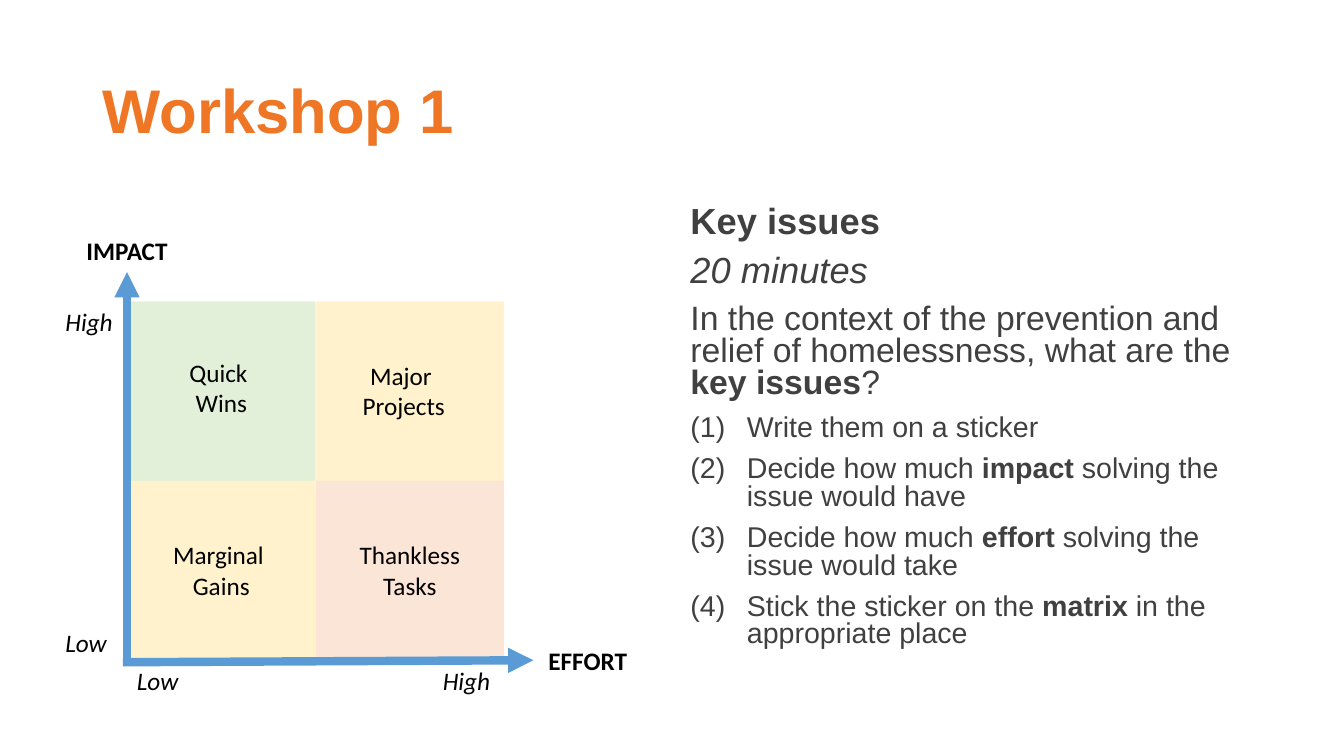
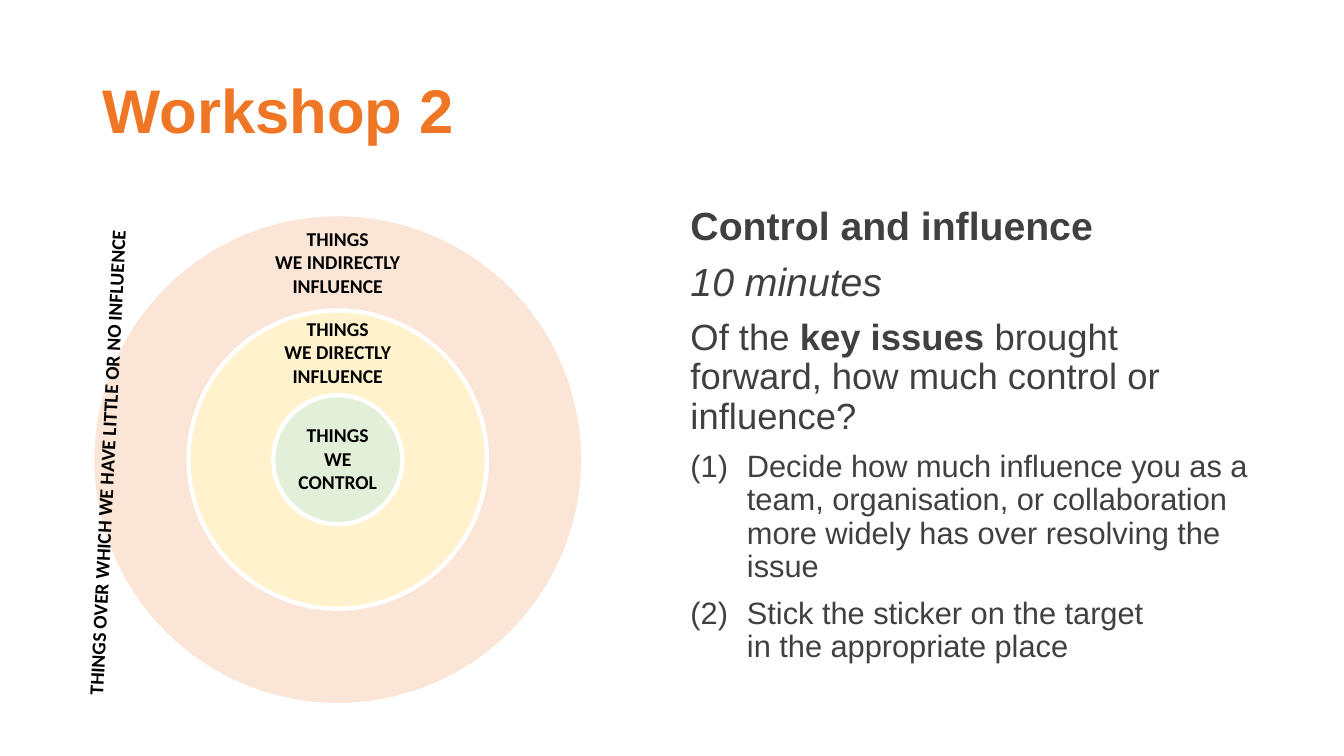
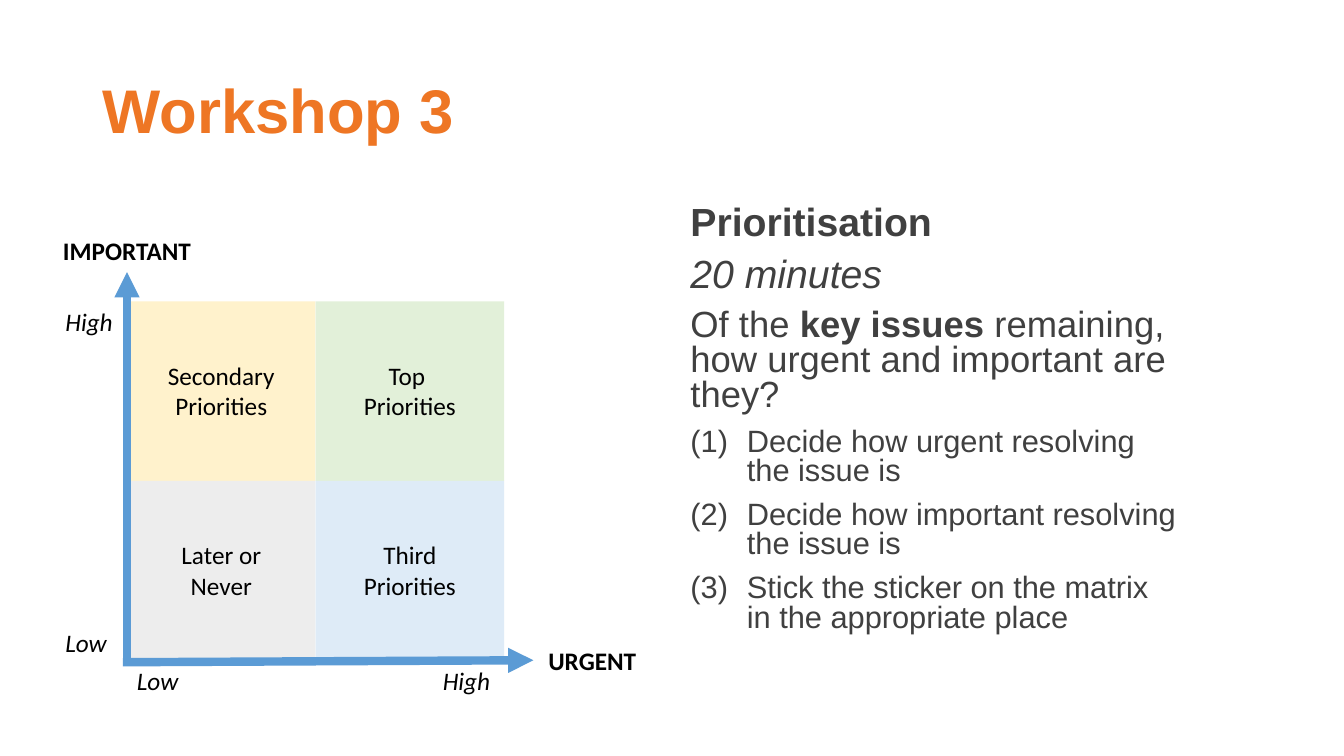
from lxml import etree
from pptx import Presentation
from pptx.dml.color import RGBColor
from pptx.enum.shapes import MSO_CONNECTOR, MSO_SHAPE
from pptx.enum.text import MSO_ANCHOR, PP_ALIGN
from pptx.oxml.ns import qn
from pptx.util import Inches, Pt

LEFT, CENTER, RIGHT = PP_ALIGN.LEFT, PP_ALIGN.CENTER, PP_ALIGN.RIGHT
TOP, MIDDLE = MSO_ANCHOR.TOP, MSO_ANCHOR.MIDDLE
RECTANGLE, OVAL = MSO_SHAPE.RECTANGLE, MSO_SHAPE.OVAL
STRAIGHT = MSO_CONNECTOR.STRAIGHT

ORANGE = RGBColor(0xEE, 0x76, 0x24)
DARK_GRAY = RGBColor(0x40, 0x40, 0x40)
BLACK = RGBColor(0x00, 0x00, 0x00)
WHITE = RGBColor(0xFF, 0xFF, 0xFF)
AXIS_BLUE = RGBColor(0x5B, 0x9B, 0xD5)
YELLOW = RGBColor(0xFF, 0xF2, 0xCC)
GREEN = RGBColor(0xE2, 0xF0, 0xD9)
PEACH = RGBColor(0xFB, 0xE5, 0xD6)
GRAY = RGBColor(0xED, 0xED, 0xED)
BLUE = RGBColor(0xDE, 0xEB, 0xF7)

HEADING_FONT, DIAGRAM_FONT = "Arial", "Calibri"

WORKSHOPS = [
    {
        "title": "Workshop 1",
        "heading": "Key issues",
        "duration": "20 minutes",
        "question": [
            ("In the context of the prevention and relief of homelessness, what are the ", False),
            ("key issues", True),
            ("?", False),
        ],
        "steps": [
            [("Write them on a sticker", False)],
            [("Decide how much ", False), ("impact", True), (" solving the issue would have", False)],
            [("Decide how much ", False), ("effort", True), (" solving the issue would take", False)],
            [("Stick the sticker on the ", False), ("matrix", True), (" in the appropriate place", False)],
        ],
        "sizes": (25.9, 24.1, 20.4),
        "line_spacing": 0.8,
        "body_width": 5.67,
        "matrix": {
            "axes": ("IMPACT", "EFFORT"),
            "quadrants": [
                (0, 0, GREEN, ["Quick \nWins"], 0, -0.03),
                (1, 0, YELLOW, ["Major ", "Projects"], -0.06, 0),
                (0, 1, YELLOW, ["Marginal \nGains"], 0, 0),
                (1, 1, PEACH, ["Thankless\nTasks"], 0, 0),
            ],
        },
    },
    {
        "title": "Workshop 2",
        "heading": "Control and influence",
        "duration": "10 minutes",
        "question": [
            ("Of the ", False),
            ("key issues", True),
            (" brought forward, how much control or influence?", False),
        ],
        "steps": [
            [("Decide how much influence you as a team, organisation, or collaboration "
              "more widely has over resolving the issue", False)],
            [("Stick the sticker on the target \nin the appropriate place", False)],
        ],
        "sizes": (28, 26, 22),
        "line_spacing": 0.9,
        "body_width": 5.79,
        "target": {
            "rings": [
                (4.87, PEACH, 2.2, ["THINGS", "WE INDIRECTLY", "INFLUENCE"]),
                (2.96, YELLOW, 3.09, ["THINGS", "WE DIRECTLY", "INFLUENCE"]),
                (1.28, GREEN, 4.15, ["THINGS", "WE", "CONTROL"]),
            ],
            "outside": "THINGS OVER WHICH WE HAVE LITTLE OR NO INFLUENCE",
        },
    },
    {
        "title": "Workshop 3",
        "heading": "Prioritisation",
        "duration": "20 minutes",
        "question": [
            ("Of the ", False),
            ("key issues", True),
            (" remaining, how urgent and important are they?", False),
        ],
        "steps": [
            [("Decide how urgent resolving \nthe issue is", False)],
            [("Decide how important resolving \nthe issue is", False)],
            [("Stick the sticker on the matrix \nin the appropriate place", False)],
        ],
        "sizes": (28, 26, 22),
        "line_spacing": 0.8,
        "body_width": 5.6,
        "matrix": {
            "axes": ("IMPORTANT", "URGENT"),
            "quadrants": [
                (0, 0, YELLOW, ["Secondary\nPriorities"], 0, 0),
                (1, 0, GREEN, ["Top ", "Priorities"], 0, 0),
                (0, 1, GRAY, ["Later or\nNever"], 0, 0),
                (1, 1, BLUE, ["Third", "Priorities"], 0, 0),
            ],
        },
    },
]

MATRIX_LEFT, MATRIX_TOP = 1.26, 2.99
CELL_WIDTH, CELL_HEIGHT = 1.87, 1.78
AXES = [((1.26, 6.57), (1.26, 2.7)), ((1.22, 6.57), (5.29, 6.55))]
SCALE_LABELS = [
    ("High", 0.55, 2.99, LEFT),
    ("Low", 0.55, 6.17, LEFT),
    ("Low", 1.26, 6.55, LEFT),
    ("High", 4.26, 6.55, RIGHT),
]
TARGET_X, TARGET_Y = 3.35, 4.56
STEP_INDENT = Inches(0.56)


def add_box(slide, left, top, width, height, anchor=TOP):
    box = slide.shapes.add_textbox(Inches(left), Inches(top), Inches(width), Inches(height))
    box.text_frame.word_wrap = True
    box.text_frame.vertical_anchor = anchor
    return box


def next_paragraph(frame, is_first):
    return frame.paragraphs[0] if is_first else frame.add_paragraph()


def add_text(paragraph, text, size, font, color, bold=False, italic=False):
    for index, line in enumerate(text.split("\n")):
        if index:
            paragraph.add_line_break()
        run = paragraph.add_run()
        run.text = line
        run.font.size = Pt(size)
        run.font.name = font
        run.font.color.rgb = color
        run.font.bold = bold
        run.font.italic = italic


def add_label(slide, lines, left, top, width, height, size=18, align=CENTER, bold=False, italic=False):
    box = add_box(slide, left, top, width, height)
    for index, line in enumerate(lines):
        paragraph = next_paragraph(box.text_frame, index == 0)
        paragraph.alignment = align
        add_text(paragraph, line, size, DIAGRAM_FONT, BLACK, bold, italic)
    return box


def add_filled(slide, kind, left, top, width, height, color):
    shape = slide.shapes.add_shape(kind, Inches(left), Inches(top), Inches(width), Inches(height))
    shape.shadow.inherit = False
    shape.fill.solid()
    shape.fill.fore_color.rgb = color
    shape.line.fill.background()
    return shape


def add_arrow(slide, start, end):
    arrow = slide.shapes.add_connector(STRAIGHT, *(Inches(value) for value in start + end))
    arrow.line.color.rgb = AXIS_BLUE
    arrow.line.width = Pt(6)
    etree.SubElement(arrow.line._get_or_add_ln(), qn("a:tailEnd"), type="triangle")
    etree.SubElement(arrow._element.spPr, qn("a:effectLst"))


def add_title(slide, title):
    paragraph = add_box(slide, 0.92, 0.4, 11.5, 1.45, MIDDLE).text_frame.paragraphs[0]
    paragraph.line_spacing = 0.9
    add_text(paragraph, title, 44, HEADING_FONT, ORANGE, bold=True)


def number_paragraph(paragraph):
    properties = paragraph._p.get_or_add_pPr()
    properties.set("marL", str(STEP_INDENT))
    properties.set("indent", str(-STEP_INDENT))
    etree.SubElement(properties, qn("a:buFont"), typeface=HEADING_FONT)
    etree.SubElement(properties, qn("a:buAutoNum"), type="arabicParenBoth")


def add_body(slide, workshop):
    heading_size, question_size, step_size = workshop["sizes"]
    rows = [
        ([(workshop["heading"], True)], heading_size, False, False),
        ([(workshop["duration"], False)], heading_size, True, False),
        (workshop["question"], question_size, False, False),
    ]
    rows += [(step, step_size, False, True) for step in workshop["steps"]]
    frame = add_box(slide, 6.75, 2, workshop["body_width"], 4.76).text_frame
    for index, (runs, size, italic, numbered) in enumerate(rows):
        paragraph = next_paragraph(frame, index == 0)
        if numbered:
            number_paragraph(paragraph)
        paragraph.line_spacing = workshop["line_spacing"]
        if index:
            paragraph.space_before = Pt(10)
        for text, bold in runs:
            add_text(paragraph, text, size, HEADING_FONT, DARK_GRAY, bold, italic)


def add_matrix(slide, matrix):
    cells = [
        (MATRIX_LEFT + column * CELL_WIDTH, MATRIX_TOP + row * CELL_HEIGHT, *rest)
        for column, row, *rest in matrix["quadrants"]
    ]
    for left, top, color, *_ in cells:
        add_filled(slide, RECTANGLE, left, top, CELL_WIDTH, CELL_HEIGHT, color)
    for start, end in AXES:
        add_arrow(slide, start, end)
    vertical, horizontal = matrix["axes"]
    add_label(slide, [vertical], MATRIX_LEFT - 0.75, 2.29, 1.5, 0.4, bold=True)
    add_label(slide, [horizontal], 5.34, 6.35, 1.2, 0.4, align=LEFT, bold=True)
    for text, left, top, align in SCALE_LABELS:
        add_label(slide, [text], left, top, 0.7, 0.4, align=align, italic=True)
    width, height = 1.3, 0.71
    for left, top, color, lines, shift_x, shift_y in cells:
        add_label(slide, lines, left + (CELL_WIDTH - width) / 2 + shift_x,
                  top + (CELL_HEIGHT - height) / 2 + shift_y, width, height)


def add_target(slide, target):
    for diameter, color, *_ in target["rings"]:
        ring = add_filled(slide, OVAL, TARGET_X - diameter / 2, TARGET_Y - diameter / 2,
                          diameter, diameter, color)
        ring.line.color.rgb = WHITE
        ring.line.width = Pt(3)
    width = 1.5
    for _, _, label_top, lines in target["rings"]:
        add_label(slide, lines, TARGET_X - width / 2, label_top, width, 0.81, size=14, bold=True)
    outside = add_label(slide, [target["outside"]], 0.76, 2.01, 5.24, 5.15, size=14, bold=True)
    outside.rotation = 272.8
    outside.text_frame.margin_top = Inches(0.14)
    outside.text_frame.margin_right = Inches(0.34)


def main():
    presentation = Presentation()
    presentation.slide_width, presentation.slide_height = Inches(13.33), Inches(7.5)
    for workshop in WORKSHOPS:
        slide = presentation.slides.add_slide(presentation.slide_layouts[6])
        add_title(slide, workshop["title"])
        add_body(slide, workshop)
        if "matrix" in workshop:
            add_matrix(slide, workshop["matrix"])
        else:
            add_target(slide, workshop["target"])
    presentation.save("out.pptx")


if __name__ == "__main__":
    main()
